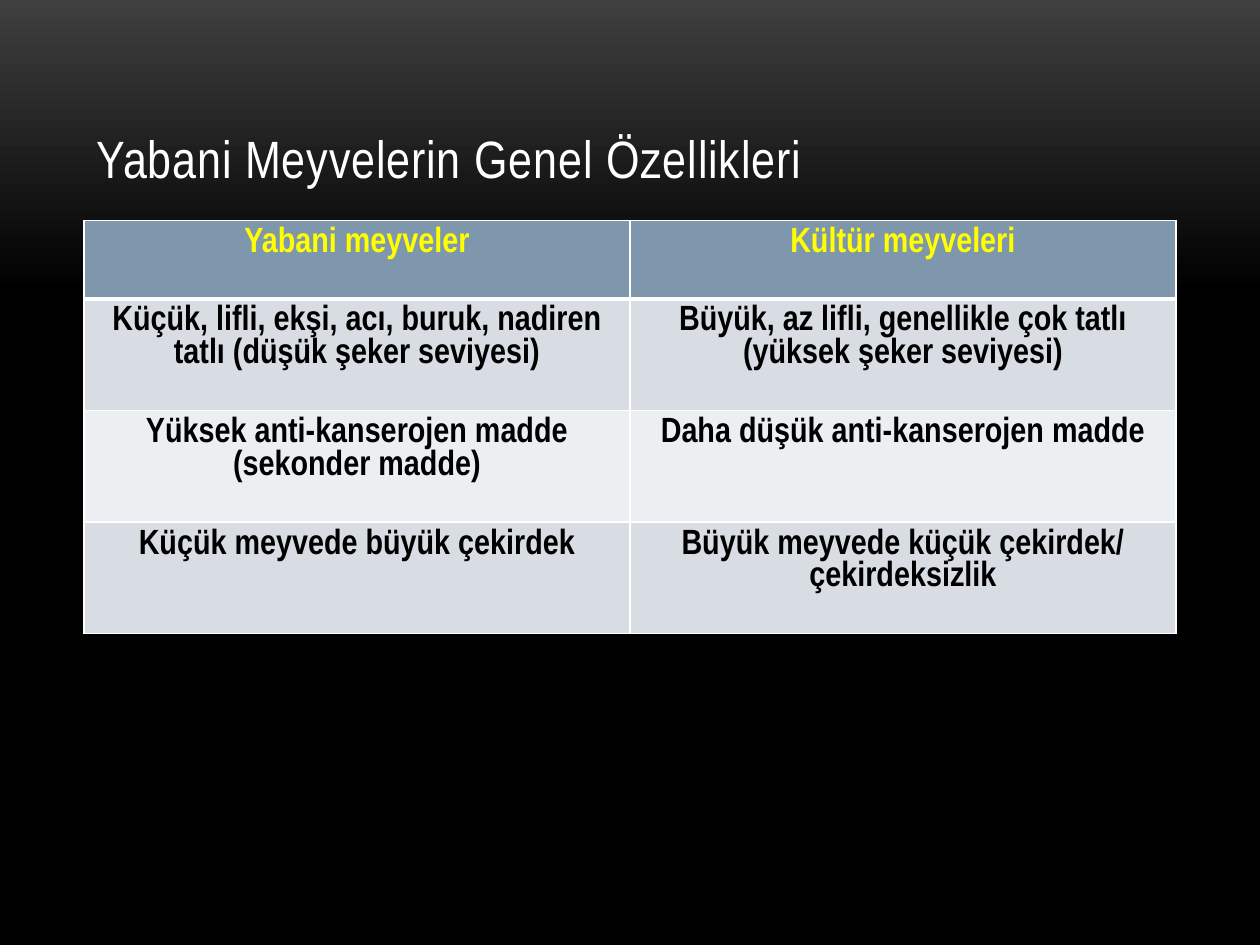
from lxml.etree import SubElement
from pptx import Presentation
from pptx.dml.color import RGBColor
from pptx.enum.text import MSO_ANCHOR, MSO_AUTO_SIZE, PP_ALIGN
from pptx.oxml.ns import qn
from pptx.util import Pt

# Content
TITLE = "Yabani Meyvelerin Genel Özellikleri"
ROWS = [
    ("Yabani meyveler", "Kültür meyveleri"),
    ("Küçük, lifli, ekşi, acı, buruk, nadiren tatlı (düşük şeker seviyesi)",
     "Büyük, az lifli, genellikle çok tatlı (yüksek şeker seviyesi)"),
    ("Yüksek anti-kanserojen madde (sekonder madde)",
     "Daha düşük anti-kanserojen madde"),
    ("Küçük meyvede büyük çekirdek",
     "Büyük meyvede küçük çekirdek/ çekirdeksizlik"),
]

# Style
FONT = "Arial Narrow"
WHITE = RGBColor(0xFF, 0xFF, 0xFF)
BLACK = RGBColor(0x00, 0x00, 0x00)
CHARCOAL = RGBColor(0x3F, 0x3F, 0x3F)
YELLOW = RGBColor(0xFF, 0xFF, 0x00)
HEADER_FILL = RGBColor(0x7E, 0x97, 0xAD)
BAND_FILLS = (RGBColor(0xD8, 0xDD, 0xE3), RGBColor(0xEC, 0xEF, 0xF1))

# Layout
LEFT, WIDTH = 48, 624
TITLE_TOP, TITLE_HEIGHT = 21.6, 90
TABLE_TOP = 126
HEADER_HEIGHT, ROW_HEIGHT = 44.8, 63.8


def add_run(paragraph, text, size, color, bold=False):
    run = paragraph.add_run()
    run.text = text
    font = run.font
    font.name, font.size, font.bold = FONT, Pt(size), bold
    font.color.rgb = color
    return run


def set_borders(cell, widths):
    """Draw white borders; they must come before the cell's fill."""
    properties = cell._tc.get_or_add_tcPr()
    for side, width in widths.items():
        line = SubElement(properties, qn(f"a:{side}"), w=str(Pt(width)))
        fill = SubElement(line, qn("a:solidFill"))
        SubElement(fill, qn("a:srgbClr"), val=str(WHITE))


prs = Presentation()
prs.slide_width, prs.slide_height = Pt(720), Pt(540)
slide = prs.slides.add_slide(prs.slide_layouts[5])

# Background, dark from the top down
background = slide.background.fill
background.gradient()
background.gradient_angle = 270
for stop, (position, color) in zip(background.gradient_stops,
                                   [(0, CHARCOAL), (0.31, BLACK)]):
    stop.position = position
    stop.color.rgb = color

# Title
title = slide.shapes.title
title.left, title.top = Pt(LEFT), Pt(TITLE_TOP)
title.width, title.height = Pt(WIDTH), Pt(TITLE_HEIGHT)
title_frame = title.text_frame
title_frame.auto_size = MSO_AUTO_SIZE.NONE
title_frame.vertical_anchor = MSO_ANCHOR.BOTTOM
heading = title_frame.paragraphs[0]
heading.alignment = PP_ALIGN.LEFT
heading_run = add_run(heading, TITLE, 30, WHITE)
heading_run.font._element.set("spc", "50")

# Comparison table
heights = [HEADER_HEIGHT] + [ROW_HEIGHT] * (len(ROWS) - 1)
comparison = slide.shapes.add_table(
    len(ROWS), len(ROWS[0]), Pt(LEFT), Pt(TABLE_TOP), Pt(WIDTH),
    Pt(sum(heights))).table
for r, (texts, height) in enumerate(zip(ROWS, heights)):
    comparison.rows[r].height = Pt(height)
    is_header = r == 0
    for c, text in enumerate(texts):
        cell = comparison.cell(r, c)
        set_borders(cell, {"lnL": 1, "lnR": 1, "lnT": 3 if r == 1 else 1,
                           "lnB": 3 if is_header else 1})
        cell.fill.solid()
        cell.fill.fore_color.rgb = (
            HEADER_FILL if is_header else BAND_FILLS[(r - 1) % 2])
        paragraph = cell.text_frame.paragraphs[0]
        paragraph.alignment = PP_ALIGN.CENTER
        paragraph.line_spacing = 1.0
        add_run(paragraph, text, 20, YELLOW if is_header else BLACK, bold=True)

prs.save("out.pptx")
